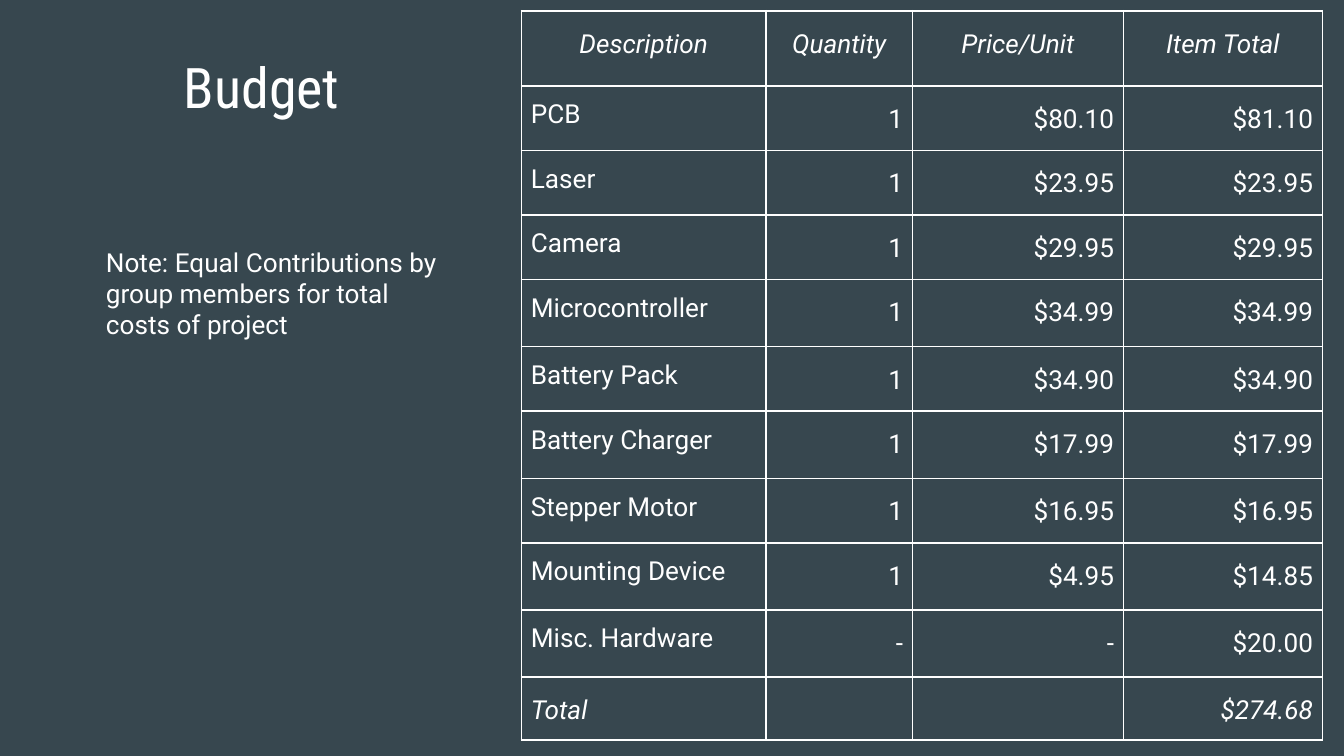
import dataclasses

import pptx
import pptx.dml.color
import pptx.enum.text
import pptx.oxml
import pptx.oxml.ns
import pptx.util

Inches = pptx.util.Inches
Pt = pptx.util.Pt
RGB = pptx.dml.color.RGBColor
ALIGN = pptx.enum.text.PP_ALIGN


@dataclasses.dataclass(frozen=True)
class Theme:
    background: str = "37474F"
    ink: str = "FFFFFF"
    heading_font: str = "Roboto Condensed"
    body_font: str = "Roboto"
    heading_size: int = 30
    body_size: int = 14
    border_width: int = 1
    line_spacing: float = 1.15


THEME = Theme()

HEADERS = ("Description", "Quantity", "Price/Unit", "Item Total")
ITEMS = (
    ("PCB", "1", "$80.10", "$81.10"),
    ("Laser", "1", "$23.95", "$23.95"),
    ("Camera", "1", "$29.95", "$29.95"),
    ("Microcontroller", "1", "$34.99", "$34.99"),
    ("Battery Pack", "1", "$34.90", "$34.90"),
    ("Battery Charger", "1", "$17.99", "$17.99"),
    ("Stepper Motor", "1", "$16.95", "$16.95"),
    ("Mounting Device", "1", "$4.95", "$14.85"),
    ("Misc. Hardware", "-", "-", "$20.00"),
)
TOTAL = ("Total", "", "", "$274.68")
COLUMN_WIDTHS = (1.82, 1.09, 1.57, 1.48)
ROW_HEIGHTS = (0.56, 0.48, 0.48, 0.48, 0.5, 0.48, 0.5, 0.48, 0.5, 0.5, 0.31)


def write(tf, text, font, size, align=ALIGN.LEFT, italic=False, spacing=None):
    """Fill a text frame with one paragraph in the theme's ink."""
    tf.text = text
    p = tf.paragraphs[0]
    p.alignment = align
    p.line_spacing = spacing
    for r in p.runs:
        r.font.name = font
        r.font.size = Pt(size)
        r.font.italic = italic
        r.font.color.rgb = RGB.from_string(THEME.ink)


def add_text(s, box, text, font, size, align=ALIGN.LEFT):
    tf = s.shapes.add_textbox(*map(Inches, box)).text_frame
    tf.word_wrap = True
    tf.margin_left = tf.margin_right = Inches(0.1)
    tf.margin_top = tf.margin_bottom = Inches(0.1)
    write(tf, text, font, size, align)


def set_borders(cell):
    tc_pr = cell._tc.get_or_add_tcPr()
    for side in ("lnL", "lnR", "lnT", "lnB"):
        tc_pr.append(pptx.oxml.parse_xml(
            f'<a:{side} {pptx.oxml.ns.nsdecls("a")} w="{Pt(THEME.border_width)}">'
            f'<a:solidFill><a:srgbClr val="{THEME.ink}"/></a:solidFill>'
            f'</a:{side}>'))


def add_budget_table(s, left, top):
    rows = (HEADERS, *ITEMS, TOTAL)
    table = s.shapes.add_table(
        len(rows), len(HEADERS), Inches(left), Inches(top),
        Inches(sum(COLUMN_WIDTHS)), Inches(sum(ROW_HEIGHTS))).table
    table.first_row = table.horz_banding = False
    for column, width in zip(table.columns, COLUMN_WIDTHS):
        column.width = Inches(width)
    for row, height in zip(table.rows, ROW_HEIGHTS):
        row.height = Inches(height)

    for i, values in enumerate(rows):
        is_item = values in ITEMS
        for j, value in enumerate(values):
            cell = table.cell(i, j)
            set_borders(cell)
            cell.fill.background()
            if not value:
                continue
            cell.margin_left = cell.margin_right = Inches(0.07)
            cell.margin_top = cell.margin_bottom = Inches(0.1)
            if values is HEADERS:
                align = ALIGN.CENTER
            else:
                align = ALIGN.RIGHT if j else ALIGN.LEFT
            spacing = None if is_item and j == 0 else THEME.line_spacing
            write(cell.text_frame, value, THEME.body_font, THEME.body_size,
                  align, not is_item, spacing)


def add_budget_slide(prs):
    s = prs.slides.add_slide(prs.slide_layouts[6])
    s.background.fill.solid()
    s.background.fill.fore_color.rgb = RGB.from_string(THEME.background)
    add_text(s, (0.33, 0.29, 3.33, 0.88), "Budget ",
             THEME.heading_font, THEME.heading_size, ALIGN.CENTER)
    add_budget_table(s, 3.88, 0.08)
    add_text(s, (0.69, 1.73, 2.83, 1.73),
             "Note: Equal Contributions by group members for total costs of project",
             THEME.body_font, THEME.body_size)


def main():
    prs = pptx.Presentation()
    prs.slide_width = Inches(10)
    prs.slide_height = prs.slide_width * 9 // 16
    add_budget_slide(prs)
    prs.save("out.pptx")


if __name__ == "__main__":
    main()
